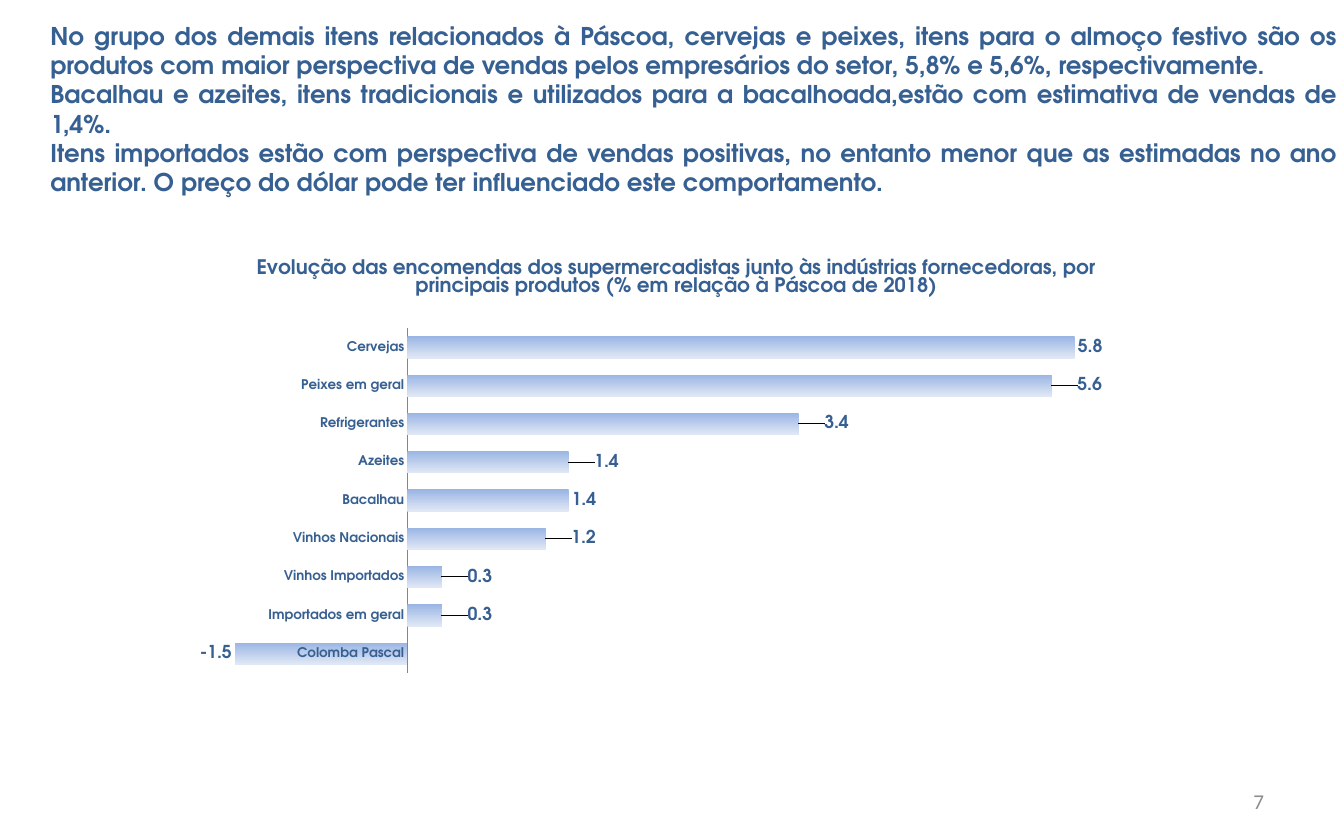
from lxml.etree import SubElement
from pptx import Presentation
from pptx.chart.data import CategoryChartData
from pptx.dml.color import RGBColor
from pptx.enum.chart import XL_CHART_TYPE, XL_LABEL_POSITION, XL_TICK_MARK
from pptx.enum.text import MSO_ANCHOR, PP_ALIGN
from pptx.oxml import parse_xml
from pptx.oxml.ns import nsdecls, qn
from pptx.util import Inches, Pt

NAVY = RGBColor(0x37, 0x60, 0x92)
BAR_TOP = RGBColor(0x9A, 0xB5, 0xE4)
BAR_BOTTOM = RGBColor(0xE1, 0xE8, 0xF5)
AXIS_GRAY = RGBColor(0x86, 0x86, 0x86)
NUMBER_GRAY = RGBColor(0x8C, 0x8C, 0x8C)
HEADING_FONT = "TeX Gyre Adventor"

COMMENTS = [
    "No grupo dos demais itens relacionados à Páscoa, cervejas e peixes, itens para o almoço festivo são os produtos com maior perspectiva de vendas pelos empresários do setor, 5,8% e 5,6%, respectivamente.",
    "Bacalhau e azeites, itens tradicionais e utilizados para a bacalhoada,estão com estimativa de vendas de 1,4%.",
    "Itens importados estão com perspectiva de vendas positivas, no entanto menor que as estimadas no ano anterior. O preço do dólar pode ter influenciado este comportamento.",
]
CHART_TITLE = (
    "Evolução das encomendas dos supermercadistas junto às indústrias fornecedoras, "
    "por principais produtos (% em relação à Páscoa de 2018)"
)
ORDERS = {
    "Colomba Pascal": -1.5,
    "Importados em geral": 0.3,
    "Vinhos Importados": 0.3,
    "Vinhos Nacionais": 1.2,
    "Bacalhau": 1.4,
    "Azeites": 1.4,
    "Refrigerantes": 3.4,
    "Peixes em geral": 5.6,
    "Cervejas": 5.8,
}
SHIFTED_LABELS = [1, 2, 3, 5, 6, 7]
LABEL_SHIFT = 0.02


def style_font(font, size, color=NAVY, name=HEADING_FONT, bold=True):
    font.size = Pt(size)
    font.color.rgb = color
    font.name = name
    font.bold = bold


def manual_layout(**settings):
    layout = parse_xml(f"<c:layout {nsdecls('c')}><c:manualLayout/></c:layout>")
    for key, value in settings.items():
        SubElement(layout[0], qn(f"c:{key}")).set("val", str(value))
    return layout


deck = Presentation()
deck.slide_width = Inches(16.8)
deck.slide_height = Inches(10.5)
page = deck.slides.add_slide(deck.slide_layouts[6])

comment_box = page.shapes.add_textbox(Inches(0.53), Inches(0.21), Inches(16.28), Inches(2.69))
comment_frame = comment_box.text_frame
comment_frame.word_wrap = True
comment_frame.text = "\n".join(COMMENTS)
for para in comment_frame.paragraphs:
    para.alignment = PP_ALIGN.JUSTIFY
    style_font(para.runs[0].font, 22)

chart_data = CategoryChartData(number_format="0.0")
chart_data.categories = list(ORDERS)
chart_data.add_series("Series 1", list(ORDERS.values()))
chart = page.shapes.add_chart(
    XL_CHART_TYPE.BAR_CLUSTERED, Inches(1.47), Inches(3.05), Inches(14.1), Inches(5.72), chart_data
).chart
chart.has_legend = False
chart.font.size = Pt(10)
chart.font.name = "Calibri"

chart.has_title = True
title_frame = chart.chart_title.text_frame
title_frame.text = CHART_TITLE
title_para = title_frame.paragraphs[0]
title_para.line_spacing = 0.75
style_font(title_para.runs[0].font, 18)
title_element = chart.chart_title._element
for old_layout in title_element.findall(qn("c:layout")):
    title_element.remove(old_layout)
title_element.find(qn("c:tx")).addnext(manual_layout(xMode="edge", yMode="edge", x=0.12, y=0.02))

category_axis = chart.category_axis
category_axis.major_tick_mark = XL_TICK_MARK.NONE
category_axis.format.line.color.rgb = AXIS_GRAY
style_font(category_axis.tick_labels.font, 12)

value_axis = chart.value_axis
value_axis.visible = False
value_axis.has_major_gridlines = False
value_axis.minimum_scale = -2
value_axis.maximum_scale = 7

plot = chart.plots[0]
plot.gap_width = 75
plot.vary_by_categories = False
plot_area = category_axis._element.getparent()
for old_layout in plot_area.findall(qn("c:layout")):
    plot_area.remove(old_layout)
plot_area.insert(0, manual_layout(
    layoutTarget="inner", xMode="edge", yMode="edge", x=0.053, y=0.184, w=0.918, h=0.753))

series = plot.series[0]
series.invert_if_negative = False
bar_fill = series.format.fill
bar_fill.gradient()
bar_fill.gradient_angle = 270
for stop, color in zip(bar_fill.gradient_stops, [BAR_TOP, BAR_BOTTOM]):
    stop.color.rgb = color

labels = series.data_labels
labels.show_value = True
labels.number_format = "0.0"
labels.number_format_is_linked = False
labels.position = XL_LABEL_POSITION.OUTSIDE_END
style_font(labels.font, 16)
for index in SHIFTED_LABELS:
    label = series.points[index].data_label
    label.position = XL_LABEL_POSITION.OUTSIDE_END
    style_font(label.font, 16)
for label_element in series._element.iter(qn("c:dLbl")):
    label_element.find(qn("c:idx")).addnext(manual_layout(x=LABEL_SHIFT, y=0))

number_box = page.shapes.add_textbox(Inches(12.04), Inches(9.73), Inches(3.92), Inches(0.56))
number_frame = number_box.text_frame
number_frame.word_wrap = True
number_frame.vertical_anchor = MSO_ANCHOR.MIDDLE
number_frame.margin_left = number_frame.margin_right = Inches(0.16)
number_frame.margin_top = number_frame.margin_bottom = Inches(0.08)
number_frame.text = "7"
number_para = number_frame.paragraphs[0]
number_para.alignment = PP_ALIGN.RIGHT
style_font(number_para.runs[0].font, 19, NUMBER_GRAY, "Calibri", False)

deck.save("out.pptx")
